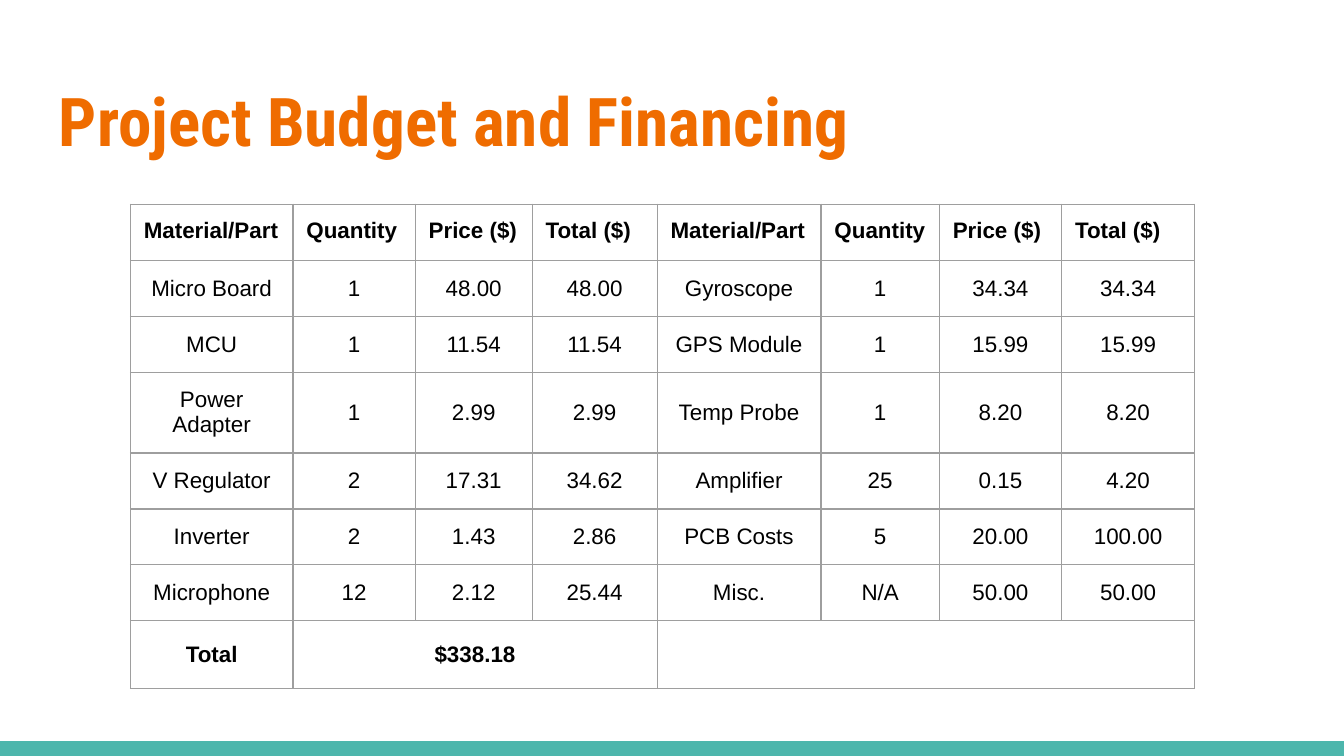
from lxml import etree
from pptx import Presentation
from pptx import util as u
from pptx.dml.color import RGBColor
from pptx.enum import shapes, text
from pptx.oxml import ns

SLIDE_W = u.Inches(10)
SLIDE_H = SLIDE_W * 9 // 16
INSET = u.Inches(0.1)
BORDER = "9E9E9E"
COLUMN_SHARES = [0.121, 0.091, 0.087, 0.093, 0.122, 0.088, 0.091, 0.099]
ROW_HEIGHT = u.Pt(30)

HEADINGS = ["Material/Part", "Quantity", "Price ($)", "Total ($)"] * 2
PARTS = [
    ["Micro Board", "1", "48.00", "48.00", "Gyroscope", "1", "34.34", "34.34"],
    ["MCU", "1", "11.54", "11.54", "GPS Module", "1", "15.99", "15.99"],
    ["Power Adapter", "1", "2.99", "2.99", "Temp Probe", "1", "8.20", "8.20"],
    ["V Regulator", "2", "17.31", "34.62", "Amplifier", "25", "0.15", "4.20"],
    ["Inverter", "2", "1.43", "2.86", "PCB Costs", "5", "20.00", "100.00"],
    ["Microphone", "12", "2.12", "25.44", "Misc.", "N/A", "50.00", "50.00"],
]
GRAND_TOTAL = ["Total", "$338.18"] + [""] * 6


def paint(color_format, hex_color):
    color_format.rgb = RGBColor.from_string(hex_color)


def add_run(paragraph, wording, font, size, color, bold):
    run = paragraph.add_run()
    run.text = wording
    run.font.name, run.font.size, run.font.bold = font, u.Pt(size), bold
    paint(run.font.color, color)


def add_footer_band(slide):
    height = u.Inches(0.11)
    band = slide.shapes.add_shape(
        shapes.MSO_SHAPE.RECTANGLE, 0, SLIDE_H - height, SLIDE_W, height)
    band.shadow.inherit = False
    band.fill.solid()
    paint(band.fill.fore_color, "4DB6AC")
    band.line.fill.background()


def add_title(slide, wording):
    title = slide.shapes.add_textbox(
        int(SLIDE_W * 0.034), u.Inches(0.49), int(SLIDE_W * 0.932), u.Inches(0.77))
    frame = title.text_frame
    frame.word_wrap = True
    frame.margin_left = frame.margin_right = INSET
    frame.margin_top = frame.margin_bottom = INSET
    add_run(frame.paragraphs[0], wording, "Roboto Condensed", 36, "EF6C00", True)


def outline_cell(cell):
    """Draw a thin line on all four sides; borders must precede the fill."""
    properties = cell._tc.get_or_add_tcPr()
    for position, side in enumerate(("a:lnL", "a:lnR", "a:lnT", "a:lnB")):
        line = etree.Element(ns.qn(side), w=str(u.Pt(0.75)))
        fill = etree.SubElement(line, ns.qn("a:solidFill"))
        etree.SubElement(fill, ns.qn("a:srgbClr"), val=BORDER)
        properties.insert(position, line)


def fill_cell(cell, wording, bold, heading):
    cell.fill.background()
    cell.margin_left = cell.margin_right = INSET
    cell.margin_top = cell.margin_bottom = INSET
    outline_cell(cell)
    paragraph = cell.text_frame.paragraphs[0]
    if not heading:
        cell.vertical_anchor = text.MSO_ANCHOR.MIDDLE
        paragraph.alignment = text.PP_ALIGN.CENTER
    if wording:
        add_run(paragraph, wording, "Arial", 12, "000000", bold)


def add_budget(slide):
    rows = [HEADINGS, *PARTS, GRAND_TOTAL]
    last = len(rows) - 1
    budget = slide.shapes.add_table(
        len(rows), len(HEADINGS), int(SLIDE_W * 0.097), u.Inches(1.52),
        int(SLIDE_W * sum(COLUMN_SHARES)), ROW_HEIGHT * len(rows)).table
    budget.first_row = budget.horz_banding = False
    for column, share in zip(budget.columns, COLUMN_SHARES):
        column.width = int(SLIDE_W * share)
    for r, row in enumerate(rows):
        budget.rows[r].height = ROW_HEIGHT
        for c, wording in enumerate(row):
            fill_cell(budget.cell(r, c), wording, r in (0, last), r == 0)
    budget.cell(last, 1).merge(budget.cell(last, 3))
    budget.cell(last, 4).merge(budget.cell(last, 7))


def main():
    deck = Presentation()
    deck.slide_width, deck.slide_height = SLIDE_W, SLIDE_H
    slide = deck.slides.add_slide(deck.slide_layouts[6])
    add_footer_band(slide)
    add_title(slide, "Project Budget and Financing")
    add_budget(slide)
    deck.save("out.pptx")


if __name__ == "__main__":
    main()
